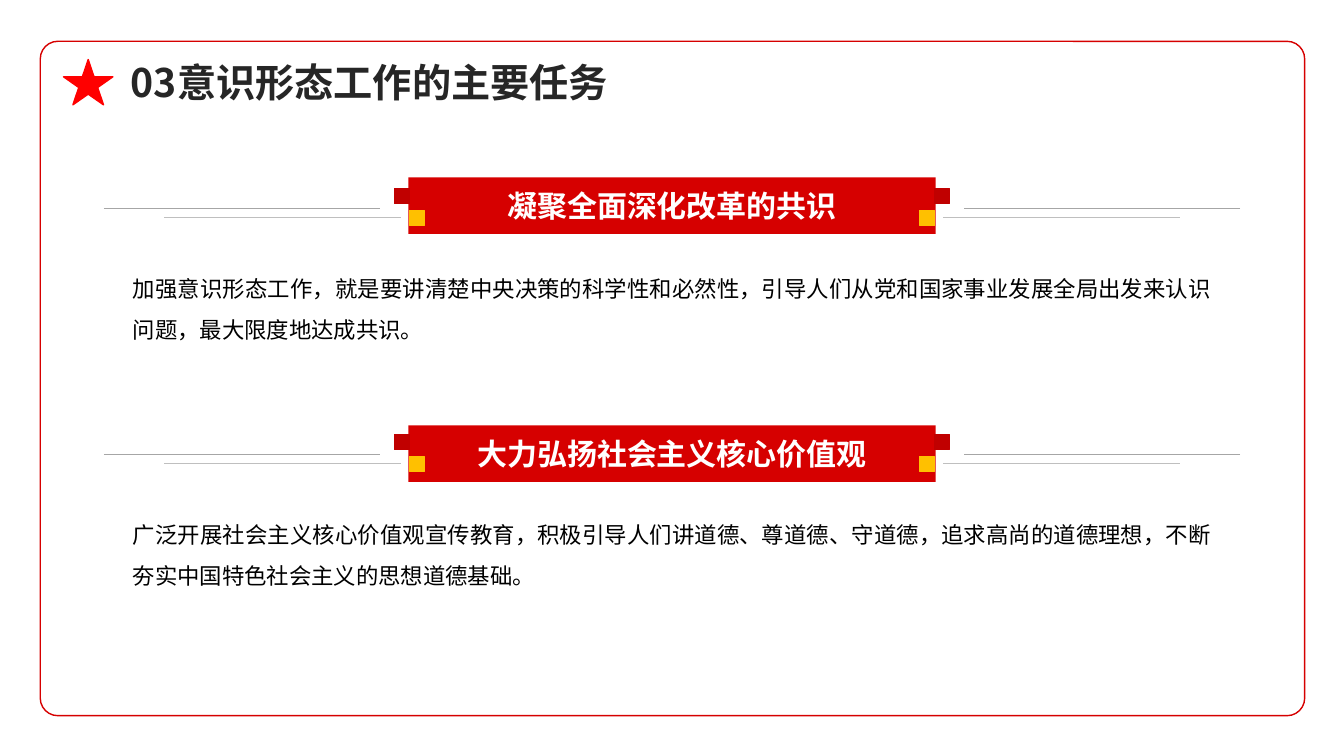
from pptx import Presentation, util as u
from pptx.dml.color import RGBColor
from pptx.enum import shapes, text
from pptx.oxml.ns import qn

WHITE = RGBColor(0xFF, 0xFF, 0xFF)
BLACK = RGBColor(0, 0, 0)
INK = RGBColor(0x26, 0x26, 0x26)
BANNER_RED = RGBColor(0xD6, 0, 0)
STAR_RED = RGBColor(0xFF, 0, 0)
DARK_RED = RGBColor(0xC0, 0, 0)
GOLD = RGBColor(0xFF, 0xC0, 0)
GREY = RGBColor(0xA6, 0xA6, 0xA6)
LIGHT_GREY = RGBColor(0xBF, 0xBF, 0xBF)
CJK_FONT = "Noto Sans CJK SC"
Kind, Align = shapes.MSO_SHAPE, text.PP_ALIGN


def inches(*lengths):
    return [u.Inches(length) for length in lengths]


def write(shape, words, size, color, font="Arial", bold=False,
          align=Align.JUSTIFY, anchor=text.MSO_ANCHOR.TOP, spacing=None):
    frame = shape.text_frame
    frame.word_wrap = True
    frame.vertical_anchor = anchor
    paragraph = frame.paragraphs[0]
    paragraph.alignment = align
    paragraph.line_spacing = spacing
    run = paragraph.add_run()
    run.text = words
    run.font.name, run.font.size, run.font.bold = font, u.Pt(size), bold
    run.font.color.rgb = color
    # East Asian typeface follows the latin one
    latin = run.font._element.find(qn("a:latin"))
    east_asian = latin.makeelement(qn("a:ea"), {"typeface": CJK_FONT})
    latin.addnext(east_asian)


def add_shape(slide, kind, box, fill, line=None, weight=1):
    shape = slide.shapes.add_shape(kind, *inches(*box))
    shape.shadow.inherit = False
    shape.fill.solid()
    shape.fill.fore_color.rgb = fill
    if line is None:
        shape.line.fill.background()
    else:
        shape.line.color.rgb = line
        shape.line.width = u.Pt(weight)
    return shape


def add_rule(slide, start, end, y, color):
    rule = slide.shapes.add_connector(
        shapes.MSO_CONNECTOR.STRAIGHT, *inches(start, y, end, y))
    rule.line.color.rgb = color
    rule.line.width = u.Pt(0.75)
    properties = rule._element.spPr
    properties.append(properties.makeelement(qn("a:effectLst"), {}))


def add_header(slide, left, top, width, height, title):
    # Rounded page frame, star and title
    frame = add_shape(slide, Kind.ROUNDED_RECTANGLE,
                      (left, top, width, height), WHITE, BANNER_RED)
    frame.adjustments[0] = 0.026
    add_shape(slide, Kind.STAR_5_POINT, (left + 0.23, top + 0.18, 0.49, 0.45),
              STAR_RED, STAR_RED)
    box = slide.shapes.add_textbox(*inches(left + 0.8, top + 0.12, 5.28, 0.57))
    write(box, title, 28, INK, font=CJK_FONT, bold=True)


def add_section(slide, left, top, width, heading, body, banner_drop=0):
    # Body text
    box = slide.shapes.add_textbox(
        *inches(left + 0.19, top + 0.79, width - 0.37, 0.91))
    write(box, body, 16, BLACK, spacing=1.5)

    # Heading banner
    banner = add_shape(slide, Kind.PENTAGON,
                       (left + 3.02, top + banner_drop, 5.23, 0.56), BANNER_RED)
    banner.adjustments[0] = 0
    write(banner, heading, 21.4, WHITE, bold=True, align=Align.CENTER,
          anchor=text.MSO_ANCHOR.MIDDLE)

    # Rules and squares, mirrored about the middle of the section
    for mirrored in (False, True):
        def place(offset):
            return left + (width - offset if mirrored else offset)

        for start, end, drop, color in ((0, 2.74, 0.31, GREY),
                                        (0.6, 2.95, 0.4, LIGHT_GREY)):
            add_rule(slide, place(start), place(end), top + drop, color)
        for offset, drop, color in ((2.88, 0.11, DARK_RED), (3.03, 0.33, GOLD)):
            square_left = min(place(offset), place(offset + 0.15))
            add_shape(slide, Kind.RECTANGLE,
                      (square_left, top + drop, 0.15, 0.15), color, color, 0.75)


def main():
    presentation = Presentation()
    presentation.slide_width, presentation.slide_height = inches(13.33, 7.5)
    slide = presentation.slides.add_slide(presentation.slide_layouts[6])

    add_header(slide, 0.4, 0.41, 12.54, 6.69, "03意识形态工作的主要任务")
    add_section(
        slide, 1.03, 1.76, 11.27, "凝聚全面深化改革的共识",
        "加强意识形态工作，就是要讲清楚中央决策的科学性和必然性，"
        "引导人们从党和国家事业发展全局出发来认识问题，最大限度地达成共识。")
    add_section(
        slide, 1.03, 4.2, 11.27, "大力弘扬社会主义核心价值观",
        "广泛开展社会主义核心价值观宣传教育，积极引导人们讲道德、尊道德、守道德，"
        "追求高尚的道德理想，不断夯实中国特色社会主义的思想道德基础。",
        banner_drop=0.02)

    presentation.save("out.pptx")


if __name__ == "__main__":
    main()
